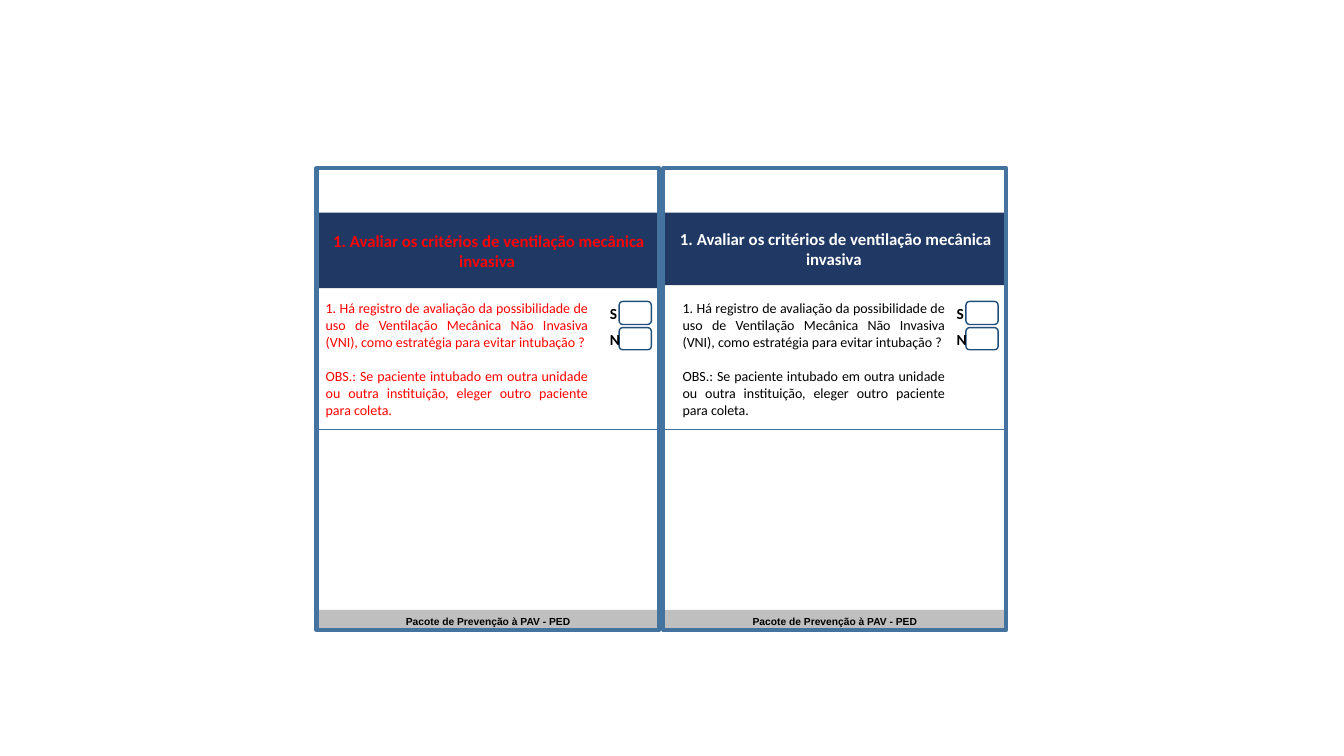
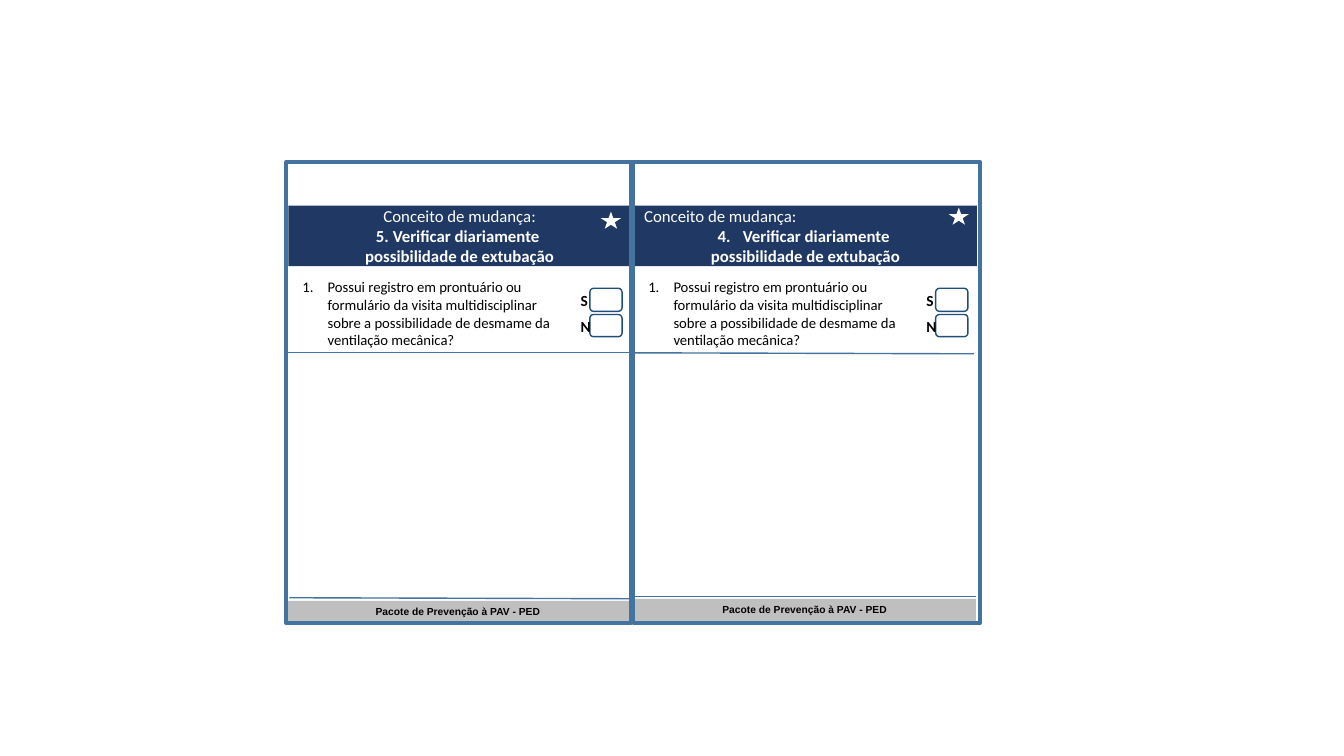
import dataclasses

import pptx
import pptx.dml.color
import pptx.enum.shapes
import pptx.enum.text
import pptx.oxml
import pptx.oxml.ns
import pptx.util

SHAPES = pptx.enum.shapes.MSO_SHAPE
ALIGN = pptx.enum.text.PP_ALIGN
ANCHOR = pptx.enum.text.MSO_ANCHOR

NAVY, BLUE, DEEP_BLUE = "203864", "43739E", "1F4E79"
GRAY, WHITE, BLACK, RED = "BFBFBF", "FFFFFF", "000000", "FF0000"
CELL = pptx.util.Inches(0.1)
FOOTER = "Pacote de Prevenção à PAV - PED"


def rgb(value):
    return pptx.dml.color.RGBColor.from_string(value)


def cells(count):
    return round(count * CELL)


@dataclasses.dataclass
class Line:
    text: str
    size: float
    color: str = BLACK
    bold: bool = False
    align: ALIGN = ALIGN.CENTER
    font: str = "Calibri"
    number: int = 0
    before: float = 0


@dataclasses.dataclass
class Card:
    left: float
    top: float
    width: float
    height: float
    heading: list
    question: list
    band: tuple
    question_at: tuple
    answers_at: tuple
    divider: tuple
    footer_row: float
    star: tuple = ()
    closing: tuple = ()


class Checklist:
    def __init__(self):
        self.deck = pptx.Presentation()
        self.deck.slide_width = pptx.util.Inches(13.33)
        self.deck.slide_height = pptx.util.Inches(7.5)
        self.slide = None

    def new_slide(self):
        self.slide = self.deck.slides.add_slide(self.deck.slide_layouts[3])

    def place(self, holder, column, row, width, height):
        holder.left, holder.top = cells(column), cells(row)
        holder.width, holder.height = cells(width), cells(height)
        return holder

    def shape(self, kind, column, row, width, height, fill=None, line=None, weight=1):
        item = self.slide.shapes.add_shape(
            kind, cells(column), cells(row), cells(width), cells(height))
        item.shadow.inherit = False
        self.paint(item, fill)
        if line:
            item.line.color.rgb = rgb(line)
            item.line.width = pptx.util.Pt(weight)
        else:
            item.line.fill.background()
        return item

    def paint(self, item, fill):
        if fill:
            item.fill.solid()
            item.fill.fore_color.rgb = rgb(fill)
        else:
            item.fill.background()

    def rule(self, start_column, start_row, end_column, end_row):
        connector = self.slide.shapes.add_connector(
            pptx.enum.shapes.MSO_CONNECTOR.STRAIGHT, cells(start_column),
            cells(start_row), cells(end_column), cells(end_row))
        connector.line.color.rgb = rgb(BLUE)
        connector.line.width = pptx.util.Pt(1)
        properties = connector._element.spPr
        properties.append(properties.makeelement(pptx.oxml.ns.qn("a:effectLst"), {}))

    def set_lines(self, holder, lines, anchor=ANCHOR.MIDDLE):
        frame = holder.text_frame
        frame.word_wrap = True
        frame.auto_size = pptx.enum.text.MSO_AUTO_SIZE.NONE
        frame.vertical_anchor = anchor
        for index, line in enumerate(lines):
            paragraph = frame.add_paragraph() if index else frame.paragraphs[0]
            self.number(paragraph, line.number)
            paragraph.text = line.text
            paragraph.alignment = line.align
            paragraph.space_before = pptx.util.Pt(line.before)
            paragraph.font.size = pptx.util.Pt(line.size)
            paragraph.font.bold = line.bold
            paragraph.font.name = line.font
            paragraph.font.color.rgb = rgb(line.color)

    def number(self, paragraph, start):
        properties = paragraph._p.get_or_add_pPr()
        hanging = cells(2.5) if start else 0
        properties.set("marL", str(hanging))
        properties.set("indent", str(-hanging))
        tag = "a:buAutoNum" if start else "a:buNone"
        bullet = properties.makeelement(pptx.oxml.ns.qn(tag), {})
        if start:
            bullet.set("type", "arabicPeriod")
            bullet.set("startAt", str(start))
        properties.append(bullet)

    def label(self, column, row, width, height, line):
        box = self.slide.shapes.add_textbox(
            cells(column), cells(row), cells(width), cells(height))
        self.set_lines(box, [line])

    def heading(self, card, is_title):
        column, row, height = card.band
        area = card.left + column, card.top + row, 34, height
        if is_title:
            band = self.place(self.slide.shapes.title, *area)
            self.paint(band, NAVY)
        else:
            band = self.shape(SHAPES.RECTANGLE, *area, fill=NAVY)
        self.set_lines(band, card.heading)

    def answers(self, column, row):
        for letter, box_row, box_height, letter_row, letter_height in (
                ("S", 0, 2.3, 0.3, 1.7), ("N", 2.6, 2.2, 3.1, 1.4)):
            self.shape(SHAPES.ROUNDED_RECTANGLE, column, row + box_row, 3.2,
                       box_height, line=DEEP_BLUE)
            self.label(column - 1.9, row + letter_row, 2.4, letter_height,
                       Line(letter, 11, bold=True))

    def card(self, card, position):
        left, top = card.left, card.top
        footer = self.shape(SHAPES.RECTANGLE, left, top + card.footer_row, 34, 2.2, fill=GRAY)
        self.set_lines(footer, [Line(FOOTER, 7.3, bold=True, font="Arial")], ANCHOR.TOP)
        self.heading(card, is_title=position == 0)
        column, row = card.question_at
        body = self.slide.placeholders[position + 1]
        self.set_lines(self.place(body, left + column, top + row, 28, 6.4), card.question)
        column, row = card.answers_at
        self.answers(left + column, top + row)
        self.shape(SHAPES.RECTANGLE, left, top, card.width, card.height, line=BLUE, weight=3)
        for line in filter(None, (card.divider, card.closing)):
            start, start_row, end, end_row = line
            self.rule(left + start, top + start_row, left + end, top + end_row)
        if card.star:
            column, row = card.star
            self.shape(SHAPES.STAR_5_POINT, left + column, top + row, 2, 1.7, fill=WHITE)


def ventilation_card(left, heading_color, text_color, band_height, question_column):
    question = [
        "1. Há registro de avaliação da possibilidade de uso de Ventilação Mecânica "
        "Não Invasiva (VNI), como estratégia para evitar intubação ?",
        "OBS.: Se paciente intubado em outra unidade ou outra instituição, eleger "
        "outro paciente para coleta."]
    return Card(
        left, 16.7, 34, 45.8,
        [Line("1. Avaliar os critérios de ventilação mecânica invasiva ", 12,
              heading_color, True)],
        [Line(text, 10, text_color, align=ALIGN.JUSTIFY, before=gap)
         for text, gap in zip(question, (0, 12.2))],
        band=(0.1, 4.4, band_height), question_at=(question_column, 15.7),
        answers_at=(30, 13.2), divider=(0.1, 25.9, 33.9, 25.9), footer_row=43.8)


def extubation_card(left, width, concept_align, change, number, **places):
    return Card(
        left, 16.1, width, 45.7,
        [Line("Conceito de mudança:", 12, WHITE, align=concept_align),
         Line(change, 12, WHITE, True, number=number),
         Line("possibilidade de extubação", 12, WHITE, True)],
        [Line("Possui registro em prontuário ou formulário da visita multidisciplinar "
              "sobre a possibilidade de desmame da ventilação mecânica?", 10.5,
              align=ALIGN.LEFT, number=1)],
        **places)


def main():
    checklist = Checklist()
    slides = [
        [ventilation_card(31.4, RED, RED, 7.5, -0.1),
         ventilation_card(65.8, WHITE, BLACK, 7.2, 0.9)],
        [extubation_card(
            28.4, 34.2, ALIGN.CENTER, "5. Verificar diariamente ", 0,
            band=(0.2, 4.3, 6), question_at=(0.6, 11.8), answers_at=(30.1, 12.5),
            divider=(0.1, 18.9, 34, 18.9), footer_row=43.5, star=(31.2, 4.9),
            closing=(0.3, 43.2, 34.1, 43.3)),
         extubation_card(
            62.8, 34.4, ALIGN.LEFT, "Verificar diariamente ", 4,
            band=(0.1, 4.3, 6), question_at=(0.5, 11.8), answers_at=(30, 12.5),
            divider=(-0.1, 18.9, 33.8, 19), footer_row=43.3, star=(31.3, 4.5),
            closing=(0.2, 43.1, 34, 43.1))],
    ]
    for cards in slides:
        checklist.new_slide()
        for position, card in enumerate(cards):
            checklist.card(card, position)
    checklist.deck.save("out.pptx")


if __name__ == "__main__":
    main()
